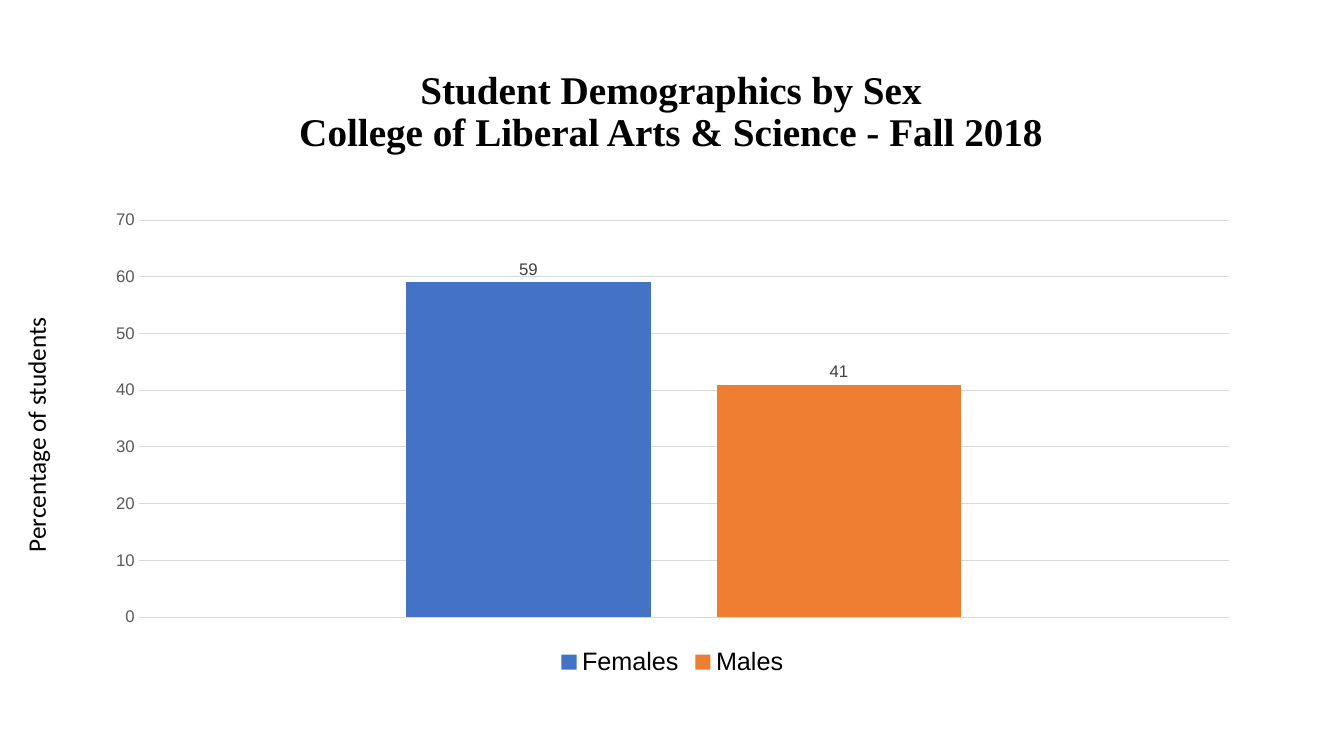
import pptx
import pptx.chart.data
import pptx.dml.color
import pptx.enum.chart
import pptx.enum.text
import pptx.util
from pptx.util import Cm

COLORS = {
    "text": "000000",
    "axis": "595959",
    "label": "404040",
    "grid": "D9D9D9",
    "Females": "4472C4",
    "Males": "ED7D31",
}
PERCENTAGES = {"Females": 59, "Males": 41}


def rgb(name):
    return pptx.dml.color.RGBColor.from_string(COLORS[name])


def set_attrs(obj, **values):
    for name, value in values.items():
        setattr(obj, name, value)


def set_font(font, size, color, name="Arial", bold=False):
    set_attrs(font, size=pptx.util.Pt(size), name=name, bold=bold)
    font.color.rgb = rgb(color)


def add_text(s, box, text, size, font, bold=False, rotation=0, frame=None, para=None):
    sp = s.shapes.add_textbox(*map(Cm, box))
    sp.rotation = rotation
    tf = sp.text_frame
    set_attrs(tf, word_wrap=True, **(frame or {}))
    p = tf.paragraphs[0]
    p.text = text
    set_attrs(p, **(para or {}))
    for r in p.runs:
        set_font(r.font, size, "text", font, bold)


def add_column_chart(s, box):
    data = pptx.chart.data.CategoryChartData()
    data.categories = ["1"]
    for name, value in PERCENTAGES.items():
        data.add_series(name, [value])
    kind = pptx.enum.chart.XL_CHART_TYPE.COLUMN_CLUSTERED
    chart = s.shapes.add_chart(kind, *map(Cm, box), data).chart
    set_attrs(chart, has_title=False, has_legend=True)
    set_font(chart.font, 10, "text")
    format_legend(chart.legend)
    format_axes(chart)
    plot = chart.plots[0]
    set_attrs(plot, gap_width=219, overlap=-27, vary_by_categories=False)
    for series in plot.series:
        format_series(series)


def format_legend(legend):
    position = pptx.enum.chart.XL_LEGEND_POSITION.BOTTOM
    set_attrs(legend, position=position, include_in_layout=False)
    set_font(legend.font, 18, "text")


def format_axes(chart):
    chart.category_axis.visible = False
    axis = chart.value_axis
    no_tick = pptx.enum.chart.XL_TICK_MARK.NONE
    set_attrs(axis, minimum_scale=0, maximum_scale=70, major_unit=10,
              major_tick_mark=no_tick, minor_tick_mark=no_tick,
              has_major_gridlines=True)
    set_font(axis.tick_labels.font, 12, "axis")
    axis.format.line.fill.background()
    line = axis.major_gridlines.format.line
    line.color.rgb = rgb("grid")
    line.width = pptx.util.Pt(0.75)


def format_series(series):
    series.format.fill.solid()
    series.format.fill.fore_color.rgb = rgb(series.name)
    series.invert_if_negative = False
    labels = series.data_labels
    position = pptx.enum.chart.XL_LABEL_POSITION.OUTSIDE_END
    set_attrs(labels, show_value=True, position=position)
    set_font(labels.font, 12, "label")


def main():
    prs = pptx.Presentation()
    set_attrs(prs, slide_width=Cm(33.87), slide_height=Cm(19.05))
    s = prs.slides.add_slide(prs.slide_layouts[6])
    add_text(s, (0.91, 1.02, 32, 3.63),
             "Student Demographics by Sex\vCollege of Liberal Arts & Science - Fall 2018",
             28, "Times New Roman", bold=True,
             frame={"vertical_anchor": pptx.enum.text.MSO_ANCHOR.MIDDLE},
             para={"alignment": pptx.enum.text.PP_ALIGN.CENTER, "line_spacing": 0.9})
    add_column_chart(s, (2.34, 5.08, 29.21, 12.09))
    add_text(s, (-2.13, 10.01, 6.68, 1.63), "Percentage of students",
             18, "Calibri", rotation=270)
    prs.save("out.pptx")


if __name__ == "__main__":
    main()
